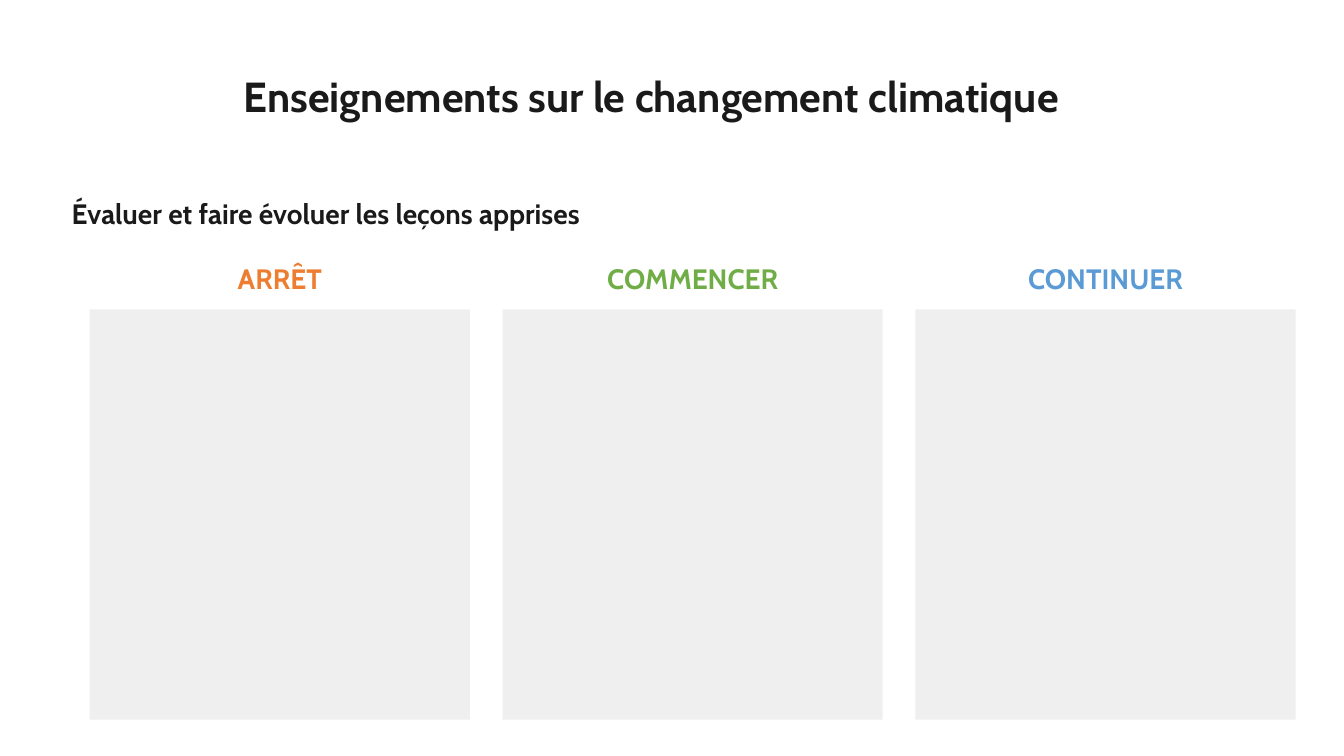
"""Build a stop, start and continue slide about climate change lessons."""
from dataclasses import dataclass

from lxml import etree
from pptx import Presentation
from pptx.dml.color import RGBColor
from pptx.enum.shapes import MSO_SHAPE
from pptx.enum.text import MSO_ANCHOR, MSO_AUTO_SIZE, PP_ALIGN
from pptx.oxml.ns import qn
from pptx.shapes.placeholder import SlidePlaceholder
from pptx.slide import Slide
from pptx.util import Inches, Pt

RECTANGLE = MSO_SHAPE.RECTANGLE
TOP, MIDDLE = MSO_ANCHOR.TOP, MSO_ANCHOR.MIDDLE
LEFT, CENTER = PP_ALIGN.LEFT, PP_ALIGN.CENTER
NO_AUTOFIT = MSO_AUTO_SIZE.NONE

COLORS = {
    "background": "FFFFFF",
    "ink": "1A1A1A",
    "stop": "ED7D31",
    "start": "70AD47",
    "continue": "5B9BD5",
    "panel": "EFEFEF",
}
FONT = "Cabin"
COMPARISON_LAYOUT = 4
COLUMN_PITCH = 4.095
HEADING_LEFT, HEADING_TOP, HEADING_WIDTH, HEADING_HEIGHT = 0.79, 2.58, 3.97, 0.49
PANEL_INSET, PANEL_HEIGHT = 0.1, 4.07


@dataclass(frozen=True)
class Box:
    left: float
    top: float
    width: float
    height: float


@dataclass(frozen=True)
class Label:
    text: str
    box: Box
    color: str = "ink"
    size: int = 20
    alignment: PP_ALIGN = CENTER
    anchor: MSO_ANCHOR = TOP
    margin_right: float = 0.1


def heading_box(column: int) -> Box:
    """Return the heading area of a column."""
    left = HEADING_LEFT + column * COLUMN_PITCH
    return Box(left, HEADING_TOP, HEADING_WIDTH, HEADING_HEIGHT)


TITLE = Label("Enseignements sur le changement climatique", Box(2.22, 0.45, 8.78, 1.07),
              size=30, anchor=MIDDLE, margin_right=0.4)
SUBTITLE = Label("Évaluer et faire évoluer les leçons apprises", Box(0.61, 1.94, 8.37, 0.64),
                 alignment=LEFT)
HEADINGS = [
    Label("ARRÊT", heading_box(0), "stop"),
    Label("COMMENCER", heading_box(1), "start"),
    Label("CONTINUER", heading_box(2), "continue"),
]


def fill_placeholder(placeholder: SlidePlaceholder, label: Label) -> None:
    """Move a placeholder and write its label."""
    placeholder.left, placeholder.top = Inches(label.box.left), Inches(label.box.top)
    placeholder.width, placeholder.height = Inches(label.box.width), Inches(label.box.height)
    frame = placeholder.text_frame
    frame.word_wrap = True
    frame.auto_size = NO_AUTOFIT
    frame.vertical_anchor = label.anchor
    frame.margin_left, frame.margin_right = Inches(0.1), Inches(label.margin_right)
    frame.margin_top = frame.margin_bottom = Inches(0.05)
    paragraph = frame.paragraphs[0]
    properties = paragraph._p.get_or_add_pPr()
    properties.set("marL", "0")
    properties.set("indent", "0")
    etree.SubElement(properties, qn("a:buNone"))
    paragraph.alignment = label.alignment
    paragraph.line_spacing = 0.9
    paragraph.space_before = Pt(0)
    run = paragraph.add_run()
    run.text = label.text
    run.font.name = FONT
    run.font.size = Pt(label.size)
    run.font.bold = True
    run.font.color.rgb = RGBColor.from_string(COLORS[label.color])


def add_panel(slide: Slide, heading: Box) -> None:
    """Draw the empty panel under a heading."""
    panel = slide.shapes.add_shape(
        RECTANGLE,
        Inches(heading.left + PANEL_INSET),
        Inches(heading.top + heading.height),
        Inches(heading.width - 2 * PANEL_INSET),
        Inches(PANEL_HEIGHT),
    )
    panel.shadow.inherit = False
    panel.fill.solid()
    panel.fill.fore_color.rgb = RGBColor.from_string(COLORS["panel"])
    panel.line.fill.background()


def main() -> None:
    """Build and save the presentation."""
    presentation = Presentation()
    presentation.slide_width, presentation.slide_height = Inches(13.33), Inches(7.5)
    slide = presentation.slides.add_slide(presentation.slide_layouts[COMPARISON_LAYOUT])
    slide.background.fill.solid()
    slide.background.fill.fore_color.rgb = RGBColor.from_string(COLORS["background"])
    for placeholder, label in zip(slide.placeholders, [TITLE, SUBTITLE, *HEADINGS]):
        fill_placeholder(placeholder, label)
    for heading in HEADINGS:
        add_panel(slide, heading.box)
    presentation.save("out.pptx")


if __name__ == "__main__":
    main()
